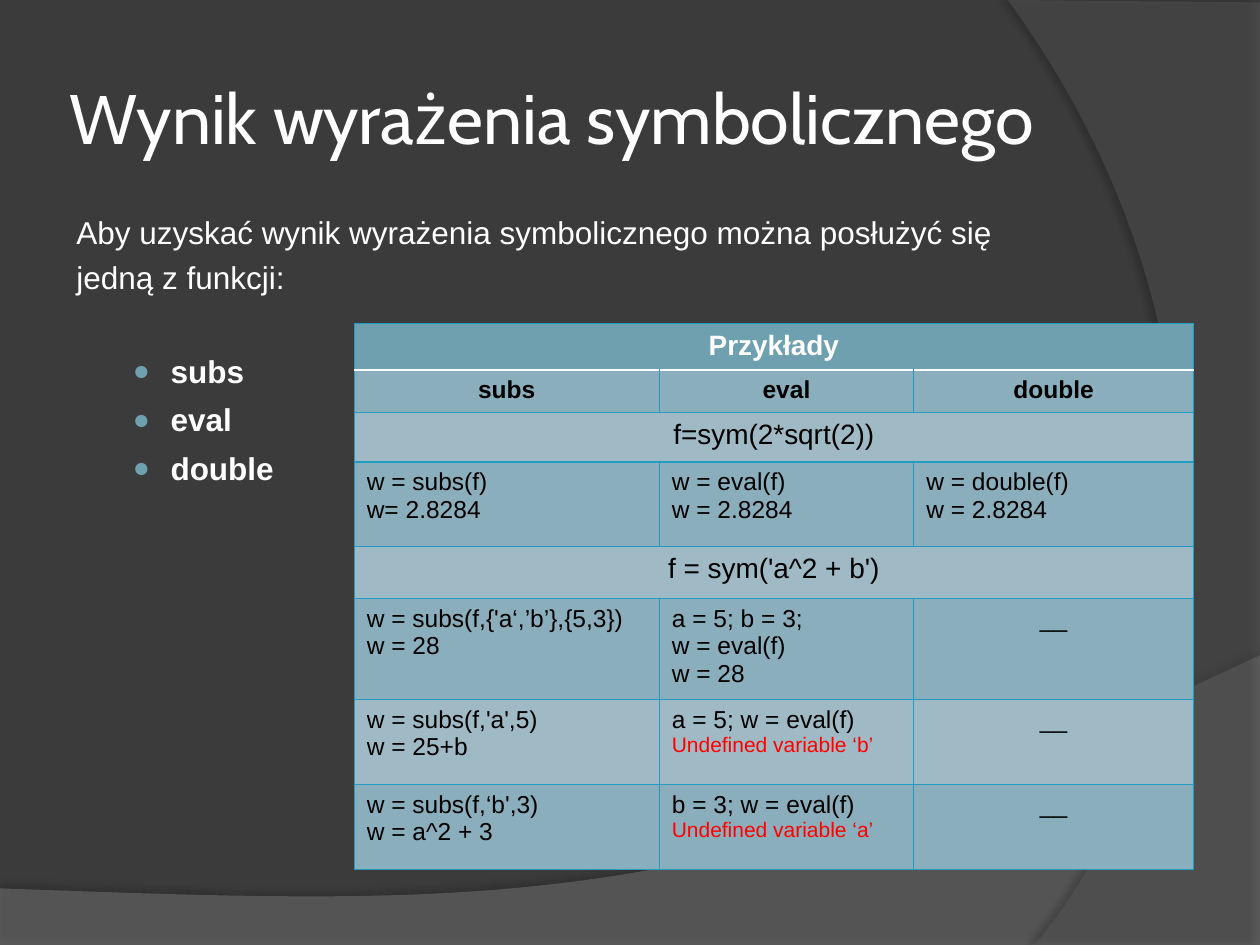
from lxml import etree
from pptx import Presentation
from pptx.dml.color import RGBColor
from pptx.enum.text import MSO_ANCHOR as ANCHOR, PP_ALIGN as ALIGN
from pptx.oxml import parse_xml
from pptx.oxml.ns import qn
from pptx.util import Cm, Pt

NS = 'xmlns:a="http://schemas.openxmlformats.org/drawingml/2006/main"'
ACCENT, MID, LIGHT, EDGE = "6EA0B0", "8AAEBC", "A0BAC5", "239BC2"
WHITE, BLACK, RED = "FFFFFF", "000000", "FF0000"


def rgb(value):
    return RGBColor.from_string(value)


def bezier(p0, p1, p2, p3, steps=48):
    """Points along a cubic curve, without its start."""
    points = []
    for i in range(1, steps + 1):
        t = i / steps
        u = 1 - t
        weights = (u**3, 3 * u * u * t, 3 * u * t * t, t**3)
        points.append(tuple(sum(w * p[axis] for w, p in zip(weights, (p0, p1, p2, p3)))
                            for axis in (0, 1)))
    return points


class Deck:
    font = "Arial"
    title_font = "Cabin"

    def __init__(self):
        self.prs = Presentation()
        self.prs.slide_width, self.prs.slide_height = Cm(25.4), Cm(19.05)
        self.s = self.prs.slides.add_slide(self.prs.slide_layouts[6])

    def background(self, color):
        fill = self.s.background.fill
        fill.solid()
        fill.fore_color.rgb = rgb(color)

    def swoosh(self, corners, curve, color, alpha, shadow_alpha, shadow_dist, shadow_dir):
        """Translucent shape: straight corners, then a curve from the last one."""
        points = [(Cm(x), Cm(y)) for x, y in corners + bezier(corners[-1], *curve)]
        builder = self.s.shapes.build_freeform(*points[0])
        builder.add_line_segments(points[1:], close=True)
        sp = builder.convert_to_shape()
        sp.line.fill.background()
        sp.fill.solid()
        sp.fill.fore_color.rgb = rgb(color)
        clr = sp.fill._xPr.find(qn("a:solidFill"))[0]
        etree.SubElement(clr, qn("a:alpha"), val=str(alpha * 1000))
        sp.shadow.inherit = False
        sp._element.spPr.find(qn("a:effectLst")).append(parse_xml(
            f'<a:outerShdw {NS} blurRad="{Pt(4)}" dist="{Pt(shadow_dist)}" '
            f'dir="{shadow_dir * 60000}" algn="ctr" rotWithShape="0"><a:srgbClr val="000000">'
            f'<a:alpha val="{shadow_alpha * 1000}"/></a:srgbClr></a:outerShdw>'))

    def run(self, p, text, size, color=WHITE, bold=False, font=None):
        r = p.add_run()
        r.text = text
        r.font.name, r.font.size, r.font.bold = font or self.font, Pt(size), bold
        r.font.color.rgb = rgb(color)

    def textbox(self, x, y, w, h):
        tf = self.s.shapes.add_textbox(Cm(x), Cm(y), Cm(w), Cm(h)).text_frame
        tf.word_wrap = True
        return tf

    def title(self, text, *box):
        tf = self.textbox(*box)
        tf.vertical_anchor = ANCHOR.MIDDLE
        tf.margin_left = tf.margin_right = tf.margin_top = tf.margin_bottom = Cm(0.13)
        self.run(tf.paragraphs[0], text, 40, font=self.title_font)

    def body(self, intro, bullets, *box):
        tf = self.textbox(*box)
        for i, text in enumerate(intro + bullets):
            p = tf.paragraphs[0] if i == 0 else tf.add_paragraph()
            p.space_before = Pt(30 if i == len(intro) else 4)
            is_bullet = i >= len(intro)
            if is_bullet:
                p.line_spacing = 1.1
            self.indent(p, is_bullet)
            self.run(p, text, 18, bold=is_bullet)

    def indent(self, p, is_bullet):
        pPr = p._p.get_or_add_pPr()
        left, first = (2.0, -0.76) if is_bullet else (1.17, -1.07)
        pPr.set("marL", str(Cm(left)))
        pPr.set("indent", str(Cm(first)))
        if is_bullet:
            for xml in (f'<a:buClr {NS}><a:srgbClr val="{ACCENT}"/></a:buClr>',
                        f'<a:buSzPct {NS} val="90000"/>',
                        f'<a:buFont {NS} typeface="{self.font}"/>',
                        f'<a:buChar {NS} char="●"/>'):
                pPr.append(parse_xml(xml))

    def table(self, x, y, widths, heights, rows):
        """Rows are (fill, size, bold, cells); a single cell spans the whole row."""
        tbl = self.s.shapes.add_table(len(rows), len(widths), Cm(x), Cm(y),
                                      Cm(sum(widths)), Cm(sum(heights))).table
        for col, width in zip(tbl.columns, widths):
            col.width = Cm(width)
        for i, (fill, size, bold, texts) in enumerate(rows):
            tbl.rows[i].height = Cm(heights[i])
            if len(texts) == 1:
                tbl.cell(i, 0).merge(tbl.cell(i, len(widths) - 1))
            for j in range(len(widths)):
                cell = tbl.cell(i, j)
                cell.fill.solid()
                cell.fill.fore_color.rgb = rgb(fill)
                self.borders(cell, i)
                if j < len(texts):
                    self.cell_text(cell, texts[j], size, bold, WHITE if i == 0 else BLACK)

    def borders(self, cell, row):
        """The line under the header row is thick and white."""
        white_side = {0: "B", 1: "T"}.get(row)
        tcPr = cell._tc.get_or_add_tcPr()
        for k, side in enumerate("LRTB"):
            color, width = (WHITE, 1.5) if side == white_side else (EDGE, 0.75)
            tcPr.insert(k, parse_xml(
                f'<a:ln{side} {NS} w="{Pt(width)}"><a:solidFill><a:srgbClr val="{color}"/>'
                f'</a:solidFill></a:ln{side}>'))

    def cell_text(self, cell, text, size, bold, color):
        tf = cell.text_frame
        for i, line in enumerate(text.split("\n")):
            p = tf.paragraphs[0] if i == 0 else tf.add_paragraph()
            if bold or size == 16 or line == "__":
                p.alignment = ALIGN.CENTER
            is_error = line.startswith("Undefined")
            self.run(p, line, 12 if is_error else size, RED if is_error else color, bold)


def main():
    d = Deck()
    d.background("3B3B3B")
    d.swoosh([(0, 17.91), (0, 19.05), (25.4, 19.05), (25.4, 13.21)],
             [(14.2, 18.52), (9.93, 18.26), (0, 17.91)], "7F7F7F", 45, 35, 3.5, 270)
    d.swoosh([(25.4, 0.05), (25.4, 19.05), (20.85, 19.05)],
             [(23.75, 15.72), (25.86, 7.62), (20.32, 0)], "5E5E5E", 40, 45, 4, 180)
    d.title("Wynik wyrażenia symbolicznego", 1.27, 0.76, 20.75, 3.18)
    functions = ["subs", "eval", "double"]
    d.body(["Aby uzyskać wynik wyrażenia symbolicznego można posłużyć się",
            "jedną z funkcji:"], functions, 1.19, 4.17, 20.75, 6.68)
    d.table(7.14, 6.53, [6.15, 5.13, 5.64],
            [0.89, 0.86, 0.99, 1.71, 1.05, 1.93, 1.71, 1.71], [
        (ACCENT, 16, True, ["Przykłady"]),
        (MID, 14, True, functions),
        (LIGHT, 16, False, ["f=sym(2*sqrt(2))"]),
        (MID, 14, False, ["w = subs(f)\nw= 2.8284", "w = eval(f)\nw = 2.8284",
                          "w = double(f)\nw = 2.8284"]),
        (LIGHT, 16, False, ["f = sym('a^2 + b')"]),
        (MID, 14, False, ["w = subs(f,{'a‘,’b’},{5,3})\nw = 28",
                          "a = 5; b = 3;\nw = eval(f)\nw = 28", "__"]),
        (LIGHT, 14, False, ["w = subs(f,'a',5)\nw = 25+b",
                            "a = 5; w = eval(f)\nUndefined variable ‘b’", "__"]),
        (MID, 14, False, ["w = subs(f,‘b',3)\nw = a^2 + 3",
                          "b = 3; w = eval(f)\nUndefined variable ‘a’", "__"]),
    ])
    d.prs.save("out.pptx")


if __name__ == "__main__":
    main()
